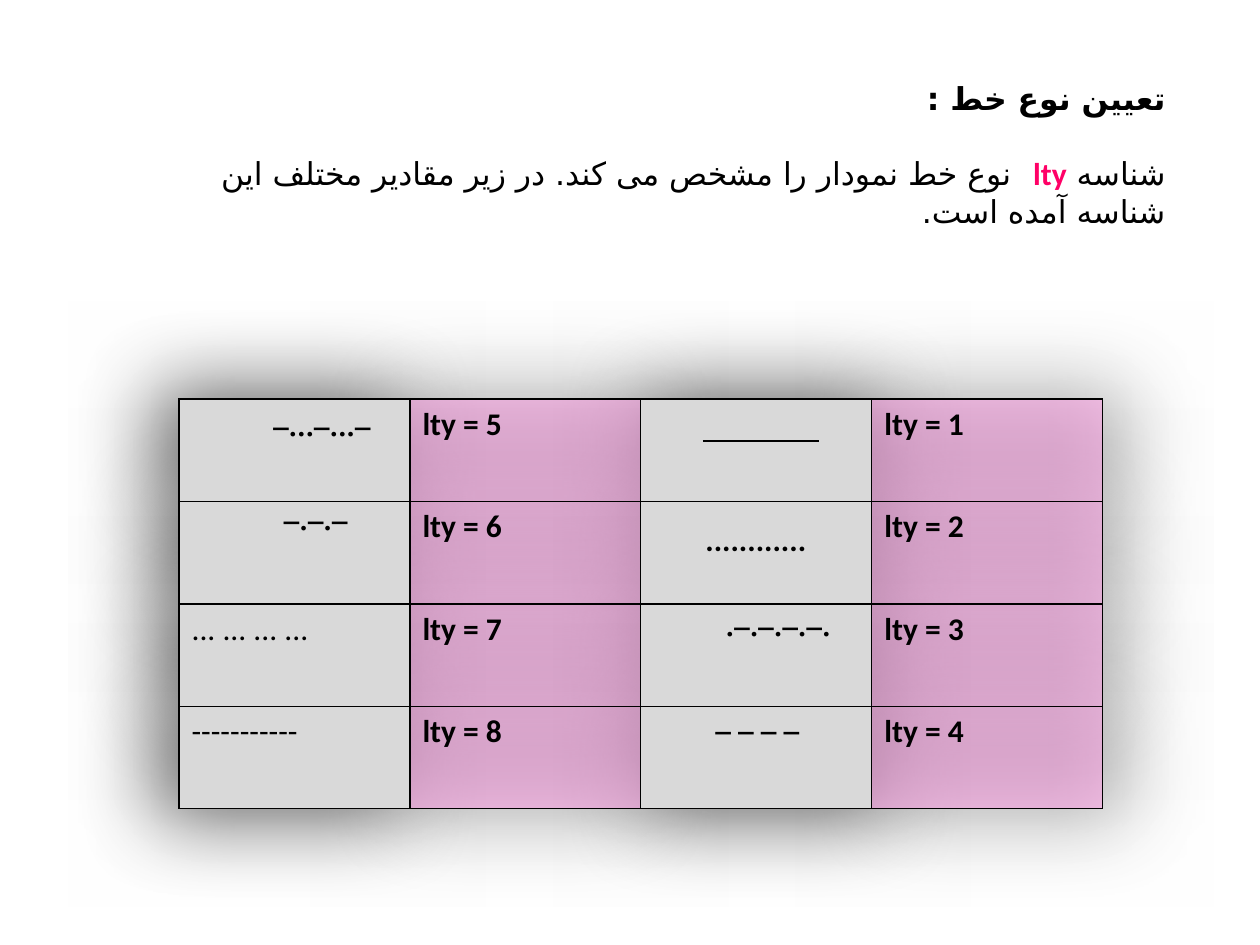
from lxml import etree
from pptx import Presentation
from pptx import util as u
from pptx.dml.color import RGBColor
from pptx.enum import text
from pptx.oxml import parse_xml
from pptx.oxml.ns import nsdecls, qn

PX = u.Inches(1) // 126
COLORS = {"ink": "000000", "accent": "FF0066", "grey": "D9D9D9", "pink": "FE98E3"}

INTRO = [
    ("شناسه ", "ink", False),
    ("lty ", "accent", True),
    (" نوع خط نمودار را مشخص می کند. در زیر مقادیر مختلف این شناسه آمده است.", "ink", False),
]
# Rows pair types 5 to 8 on the left with 1 to 4 on the right
SAMPLES = ["", "", "... ... ... ...", "-----------"]
ROWS = [[sample, f"lty = {i + 5}", "", f"lty = {i + 1}"] for i, sample in enumerate(SAMPLES)]


def rgb(name):
    return RGBColor.from_string(COLORS[name])


class Deck:
    font, script_font, size = "Calibri", "DejaVu Sans", u.Pt(18)

    def __init__(self, prs):
        self.s = prs.slides.add_slide(prs.slide_layouts[6])

    def style(self, font, color="ink", bold=True):
        font.name, font.size, font.bold = self.font, self.size, bold
        font.color.rgb = rgb(color)

    def box(self, x, y, w, h, wrap=False):
        sp = self.s.shapes.add_textbox(x * PX, y * PX, w * PX, h * PX)
        sp.text_frame.word_wrap = wrap
        return sp

    def label(self, x, y, w, h, words, rotation=0, fill=None):
        sp = self.box(x, y, w, h)
        sp.rotation = rotation
        if fill:
            sp.fill.solid()
            sp.fill.fore_color.rgb = rgb(fill)
        p = sp.text_frame.paragraphs[0]
        p.text = words
        self.style(p.font)

    def rtl_text(self, x, y, w, h, paragraphs, gap):
        tf = self.box(x, y, w, h, wrap=True).text_frame
        for i, runs in enumerate(paragraphs):
            p = tf.add_paragraph() if i else tf.paragraphs[0]
            p.alignment = text.PP_ALIGN.RIGHT
            p._p.get_or_add_pPr().set("rtl", "1")
            if i:
                p.space_before = u.Pt(gap)
            for words, color, bold in runs:
                r = p.add_run()
                r.text = words
                self.style(r.font, color, bold)
                cs = etree.SubElement(r._r.get_or_add_rPr(), qn("a:cs"))
                cs.set("typeface", self.script_font)

    def line(self, x1, y1, x2, y2):
        c = self.s.shapes.add_connector(1, x1 * PX, y1 * PX, x2 * PX, y2 * PX)
        c.line.color.rgb = rgb("ink")
        c.line.width = u.Pt(0.75)
        etree.SubElement(c._element.spPr, qn("a:effectLst"))

    def cell(self, cell, words, fill, bold, alpha=None):
        p = cell.text_frame.paragraphs[0]
        p.text = words
        self.style(p.font, bold=bold)
        cell.fill.solid()
        cell.fill.fore_color.rgb = rgb(fill)
        tcPr = cell._tc.get_or_add_tcPr()
        if alpha:
            color = tcPr.find(qn("a:solidFill"))[0]
            etree.SubElement(color, qn("a:alpha")).set("val", str(alpha * 1000))
        for i, side in enumerate(("lnL", "lnR", "lnT", "lnB")):
            tcPr.insert(i, parse_xml(
                f'<a:{side} {nsdecls("a")} w="{u.Pt(0.75)}"><a:solidFill>'
                f'<a:srgbClr val="{COLORS["ink"]}"/></a:solidFill></a:{side}>'))

    def table(self, x, y, w, h, rows):
        """Draw the table with grey sample and translucent pink name columns."""
        frame = self.s.shapes.add_table(len(rows), len(rows[0]), x * PX, y * PX, w * PX, h * PX)
        tbl = frame.table
        tbl.first_row = tbl.horz_banding = False
        for i, row in enumerate(rows):
            for j, words in enumerate(row):
                if j % 2:
                    self.cell(tbl.cell(i, j), words, "pink", True, alpha=50)
                else:
                    self.cell(tbl.cell(i, j), words, "grey", False)
        tbl._tbl.tblPr.insert(0, parse_xml(
            f'<a:effectLst {nsdecls("a")}><a:outerShdw blurRad="{u.Pt(50)}" dist="0" dir="0" '
            'sx="105000" sy="105000" algn="ctr" rotWithShape="0">'
            f'<a:srgbClr val="{COLORS["ink"]}"><a:alpha val="60000"/></a:srgbClr>'
            '</a:outerShdw></a:effectLst>'))


def main():
    prs = Presentation()
    prs.slide_width, prs.slide_height = u.Inches(10), u.Inches(7.5)
    deck = Deck(prs)
    deck.rtl_text(116, 73, 1062, 204, [[("تعیین نوع خط :", "ink", True)], INTRO], gap=21)
    deck.table(179, 399, 924, 410, ROWS)
    deck.line(703, 441, 819, 441)
    deck.label(693, 514, 145, 50, "............")
    deck.label(687, 620, 156, 50, "._._._._.", rotation=180, fill="grey")
    deck.label(703, 693, 135, 50, "_ _ _ _")
    deck.label(237, 420, 146, 50, "_..._..._", rotation=180)
    deck.label(242, 514, 118, 50, "_._._", rotation=180)
    prs.save("out.pptx")


if __name__ == "__main__":
    main()
